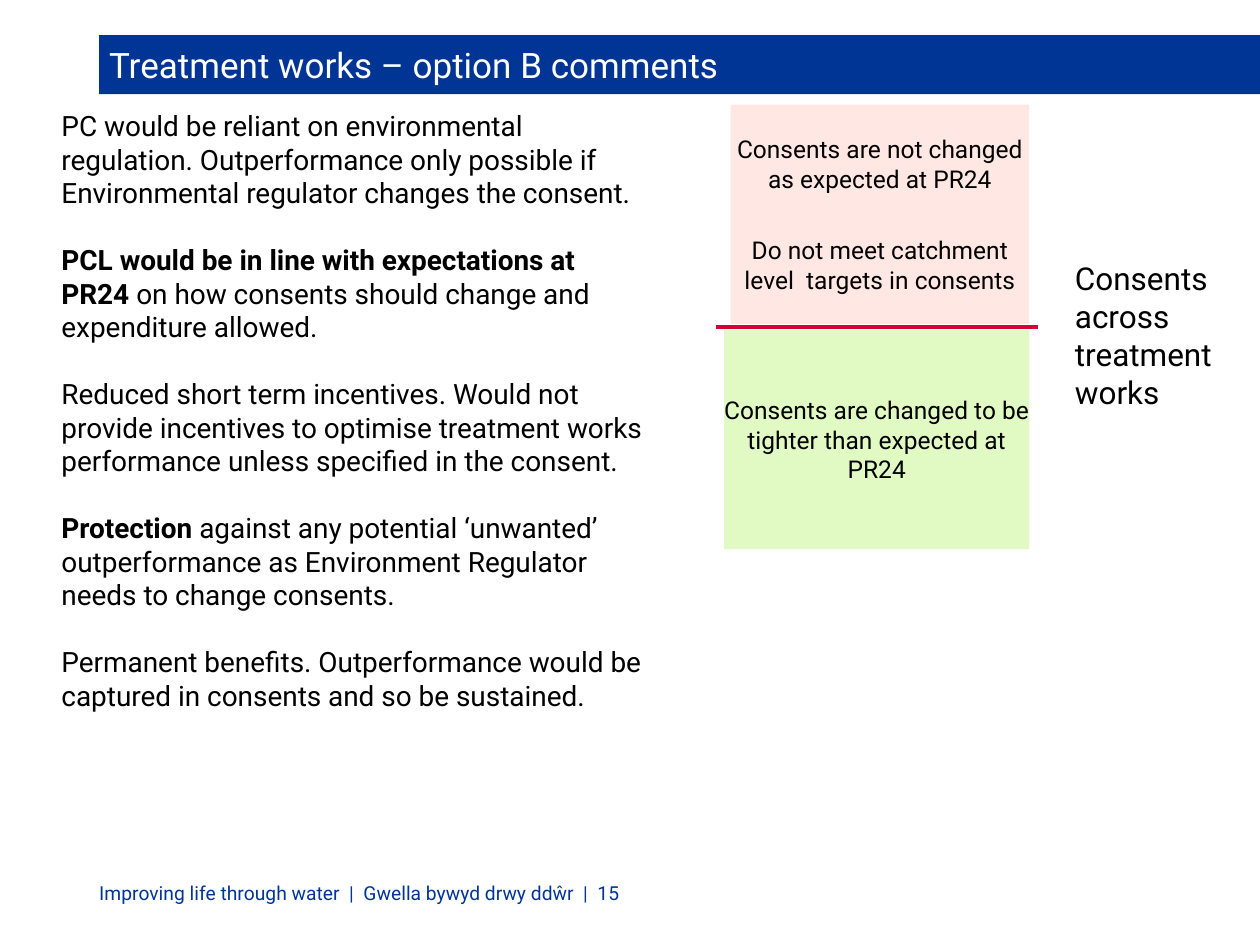
from lxml import etree
from pptx import Presentation
from pptx.dml.color import RGBColor
from pptx.enum import shapes, text
from pptx.oxml import ns
from pptx.util import Cm, Pt

FONT = "Roboto"
BLUE = RGBColor(0x00, 0x35, 0x95)
WHITE = RGBColor(0xFF, 0xFF, 0xFF)
BLACK = RGBColor(0x00, 0x00, 0x00)
PINK = RGBColor(0xFF, 0xE7, 0xE3)
GREEN = RGBColor(0xE1, 0xFA, 0xC3)
RED = RGBColor(0xD6, 0x00, 0x37)

COMMENTS = [
    [("PC would be reliant on environmental regulation. Outperformance only "
      "possible if Environmental regulator changes the consent.", False)],
    [("PCL would be in line with expectations at PR24 ", True),
     ("on how consents should change and expenditure allowed.", False)],
    [("Reduced short term incentives. Would not provide incentives to optimise "
      "treatment works performance unless specified in the consent.", False)],
    [("Protection", True),
     (" against any potential ‘unwanted’ outperformance as Environment "
      "Regulator needs to change consents.", False)],
    [("Permanent benefits. Outperformance would be captured in consents "
      "and so be sustained.", False)],
]


def place(shape, left, top, width, height):
    shape.left, shape.top = Cm(left), Cm(top)
    shape.width, shape.height = Cm(width), Cm(height)


def set_up_frame(frame, anchor, margins=(0, 0, 0, 0)):
    frame.word_wrap = True
    frame.auto_size = text.MSO_AUTO_SIZE.NONE
    frame.vertical_anchor = anchor
    frame.margin_left, frame.margin_top, frame.margin_right, frame.margin_bottom = (
        Cm(margin) for margin in margins)


def write_paragraphs(frame, paragraphs, size, color=BLACK,
                     alignment=text.PP_ALIGN.LEFT, gap=0):
    for index, runs in enumerate(paragraphs):
        paragraph = frame.add_paragraph() if index else frame.paragraphs[0]
        paragraph.alignment = alignment
        paragraph.space_before = Pt(gap if index else 0)
        for words, bold in runs:
            run = paragraph.add_run()
            run.text = words
            run.font.name = FONT
            run.font.size = Pt(size)
            run.font.bold = bold
            run.font.color.rgb = color


def add_title(slide, words):
    title = slide.shapes.title
    place(title, 2, 0.71, 23.4, 1.19)
    title.fill.solid()
    title.fill.fore_color.rgb = BLUE
    set_up_frame(title.text_frame, text.MSO_ANCHOR.MIDDLE, (0.2, 0.1, 1, 0.1))
    write_paragraphs(title.text_frame, [[(words, False)]], 20, WHITE)


def add_text(slide, box, paragraphs, size, color=BLACK,
             anchor=text.MSO_ANCHOR.TOP, gap=0):
    shape = slide.shapes.add_textbox(*map(Cm, box))
    set_up_frame(shape.text_frame, anchor)
    write_paragraphs(shape.text_frame, paragraphs, size, color, gap=gap)


def add_panel(slide, box, fill, lines):
    panel = slide.shapes.add_shape(shapes.MSO_SHAPE.RECTANGLE, *map(Cm, box))
    panel.shadow.inherit = False
    panel.fill.solid()
    panel.fill.fore_color.rgb = fill
    panel.line.fill.background()
    set_up_frame(panel.text_frame, text.MSO_ANCHOR.MIDDLE)
    write_paragraphs(panel.text_frame, [[(line, False)] for line in lines], 14,
                     alignment=text.PP_ALIGN.CENTER, gap=24)


def add_divider(slide, left, right, top):
    divider = slide.shapes.add_connector(
        shapes.MSO_CONNECTOR.STRAIGHT, Cm(left), Cm(top), Cm(right), Cm(top))
    divider.line.color.rgb = RED
    divider.line.width = Pt(2.25)
    etree.SubElement(divider.element.spPr, ns.qn("a:effectLst"))


def main():
    presentation = Presentation()
    presentation.slide_width, presentation.slide_height = Cm(25.4), Cm(19.05)
    slide = presentation.slides.add_slide(presentation.slide_layouts[5])

    add_title(slide, "Treatment works – option B comments")
    add_text(slide, (1.24, 2.19, 11.73, 15.5), COMMENTS, 16, gap=19)
    add_panel(slide, (14.73, 2.11, 6.02, 4.42), PINK,
              ["Consents are not changed as expected at PR24",
               "Do not meet catchment level  targets in consents"])
    add_divider(slide, 14.43, 20.93, 6.6)
    add_panel(slide, (14.6, 6.65, 6.15, 4.42), GREEN,
              ["Consents are changed to be tighter than expected at PR24"])
    add_text(slide, (21.67, 5.23, 3.6, 3.07),
             [[("Consents across treatment works", False)]], 18)
    add_text(slide, (2, 17.75, 13, 0.48),
             [[("Improving life through water  |  Gwella bywyd drwy ddŵr  |  15", False)]],
             11, BLUE, text.MSO_ANCHOR.MIDDLE)

    presentation.save("out.pptx")


if __name__ == "__main__":
    main()
